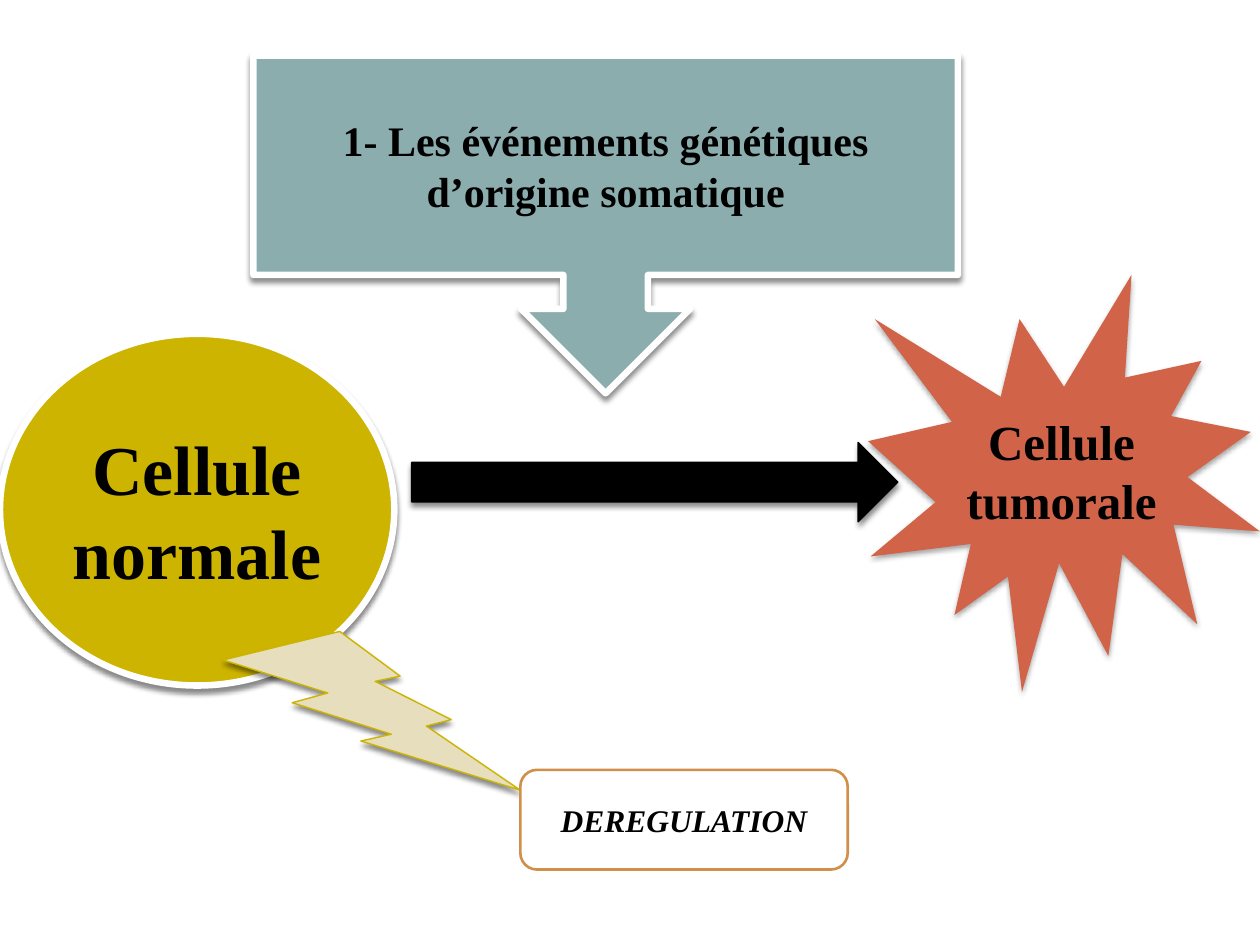
from lxml import etree
from pptx import Presentation
from pptx.dml.color import RGBColor
from pptx.enum.shapes import MSO_SHAPE
from pptx.enum.text import MSO_ANCHOR, PP_ALIGN
from pptx.oxml.ns import qn
from pptx.util import Cm, Pt

CALLOUT = MSO_SHAPE.DOWN_ARROW_CALLOUT
OVAL = MSO_SHAPE.OVAL
ARROW = MSO_SHAPE.RIGHT_ARROW
BURST = MSO_SHAPE.EXPLOSION1
BOLT = MSO_SHAPE.LIGHTNING_BOLT
ROUNDED = MSO_SHAPE.ROUNDED_RECTANGLE
MIDDLE = MSO_ANCHOR.MIDDLE
CENTER = PP_ALIGN.CENTER

FONT = "Times New Roman"
COLORS = {
    "black": "000000",
    "white": "FFFFFF",
    "teal": "8CADAE",
    "gold": "CCB400",
    "red": "D16349",
    "sand": "E7DEBD",
    "orange": "D19049",
}


def color(name):
    return RGBColor.from_string(COLORS[name])


def add_shadow(shape, opacity, distance):
    """Soft shadow falling straight down."""
    effects = shape._element.spPr.find(qn("a:effectLst"))
    shadow = etree.SubElement(
        effects, qn("a:outerShdw"), blurRad=str(Pt(3)),
        dist=str(Pt(distance)), dir="5400000", rotWithShape="0")
    tint = etree.SubElement(shadow, qn("a:srgbClr"), val=COLORS["black"])
    etree.SubElement(tint, qn("a:alpha"), val=str(opacity * 1000))


deck = Presentation()
deck.slide_width = Cm(25.4)
deck.slide_height = Cm(19.05)
page = deck.slides.add_slide(deck.slide_layouts[6])

# Kind, (left, top, width, height) in cm, fill, (line colour, points),
# (shadow opacity, distance), (text, size, italic)
STRONG = (45, 2.4)
SOFT = (35, 2)
parts = [
    (CALLOUT, (5.11, 1.12, 14.2, 6.81), "teal", ("white", 3.75), STRONG,
     ("1- Les événements génétiques d’origine somatique", 24, False)),
    (OVAL, (0, 6.73, 7.95, 7.09), "gold", ("white", 3.75), STRONG,
     ("Cellule normale ", 40, False)),
    (ARROW, (8.3, 8.92, 9.8, 1.6), "black", ("black", 0.79), STRONG, None),
    (BURST, (17.5, 5.54, 7.9, 8.41), "red", None, SOFT,
     ("Cellule tumorale", 28, False)),
    (BOLT, (4.5, 12.73, 5.99, 3.2), "sand", ("gold", 0.79), STRONG, None),
    (ROUNDED, (10.49, 15.52, 6.6, 2.01), "white", ("orange", 1.5), None,
     ("DEREGULATION", 18, True)),
]

for kind, place, fill, line, shadow, label in parts:
    shape = page.shapes.add_shape(kind, *[Cm(length) for length in place])
    shape.fill.solid()
    shape.fill.fore_color.rgb = color(fill)

    # Outline
    if line:
        shape.line.color.rgb = color(line[0])
        shape.line.width = Pt(line[1])
    else:
        shape.line.fill.background()

    # Shadow
    shape.shadow.inherit = False
    if shadow:
        add_shadow(shape, *shadow)

    # Label
    if label:
        text, size, italic = label
        frame = shape.text_frame
        frame.word_wrap = True
        frame.vertical_anchor = MIDDLE
        para = frame.paragraphs[0]
        para.text = text
        para.alignment = CENTER
        para.font.name = FONT
        para.font.size = Pt(size)
        para.font.bold = True
        para.font.italic = italic
        para.font.color.rgb = color("black")

deck.save("out.pptx")
